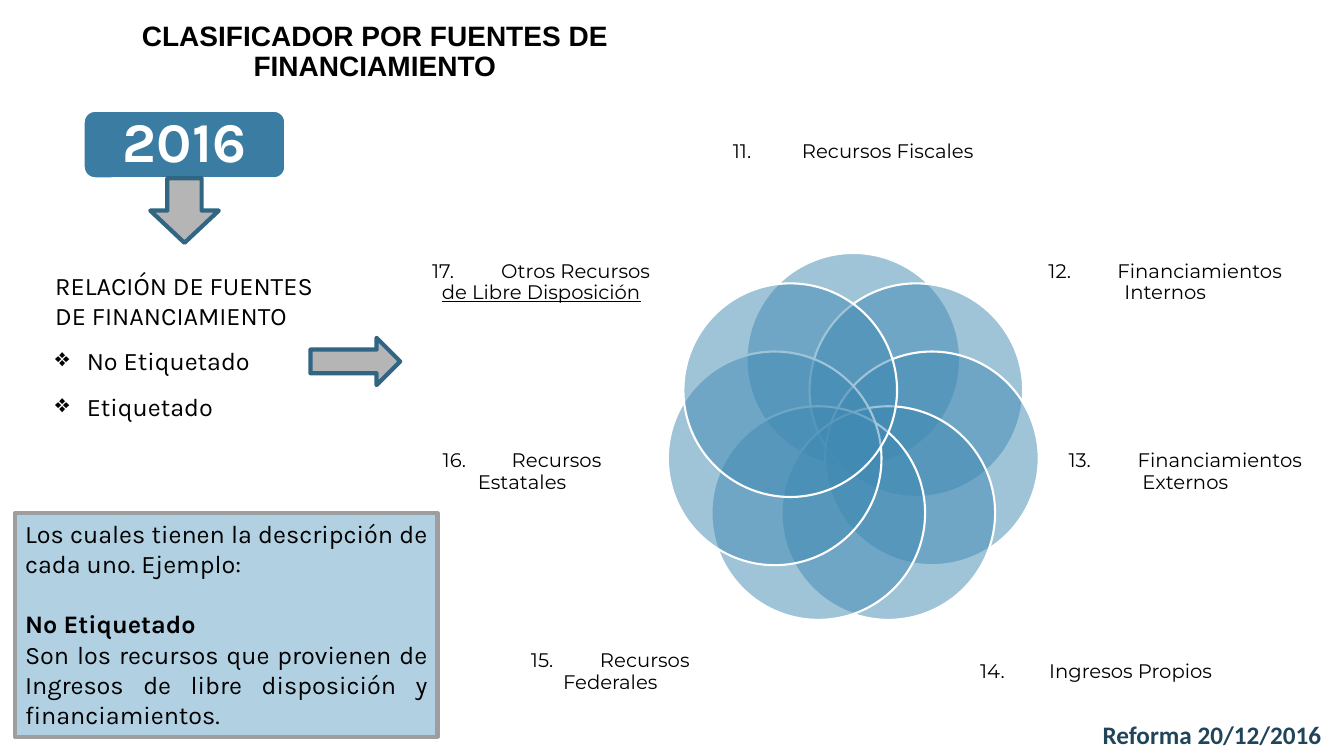
from math import cos, pi, sin

from lxml.etree import SubElement
from pptx import Presentation
from pptx.dml.color import RGBColor
from pptx.enum.shapes import MSO_SHAPE
from pptx.enum.text import MSO_ANCHOR, MSO_AUTO_SIZE, PP_ALIGN
from pptx.oxml.ns import qn
from pptx.util import Pt

BLACK = RGBColor(0x00, 0x00, 0x00)
WHITE = RGBColor(0xFF, 0xFF, 0xFF)
BLUE = RGBColor(0x3B, 0x7D, 0xA2)
PETAL_BLUE = RGBColor(0x41, 0x8A, 0xB3)
DARK_BLUE = RGBColor(0x30, 0x66, 0x84)
PALE_BLUE = RGBColor(0xB1, 0xD1, 0xE3)
NAVY = RGBColor(0x20, 0x45, 0x5A)
ARROW_GRAY = RGBColor(0xB5, 0xB5, 0xB5)
BORDER_GRAY = RGBColor(0x9E, 0x9E, 0x9E)

FUNDING_SOURCES = [
    ("11.\tRecursos Fiscales", "", (522, 61.9, 175, 93.6)),
    ("12.\tFinanciamientos Internos", "", (729.4, 150.5, 205.9, 103)),
    ("13.\tFinanciamientos Externos", "", (740.9, 282.2, 211.7, 110.2)),
    ("14.\tIngresos Propios", "", (695.5, 429.8, 175, 100.8)),
    ("15.\tRecursos Federales", "", (348.5, 429.8, 175, 100.8)),
    ("16.\tRecursos Estatales", "", (291.6, 282.2, 162.7, 110.2)),
    ("17.\tOtros Recursos", " de Libre Disposición", (303.8, 150.5, 165.6, 103)),
]
FLOWER_X, FLOWER_Y = 609.5, 314.6
RING_RADIUS = 57.6
PETAL_DIAMETER = 152.6


def write(paragraph, text, font="Karla", size=18, color=BLACK, bold=False, underline=False,
          align=PP_ALIGN.LEFT, spacing=None, before=None, bullet=None, tab=None):
    paragraph.alignment = align
    if spacing:
        paragraph.line_spacing = spacing
    if before:
        paragraph.space_before = Pt(before)
    properties = paragraph._p.get_or_add_pPr()
    if bullet:
        properties.set("marL", str(Pt(22.5)))
        properties.set("indent", str(Pt(-22.5)))
        SubElement(properties, qn("a:buChar"), char=bullet)
    if tab:
        tabs = SubElement(properties, qn("a:tabLst"))
        SubElement(tabs, qn("a:tab"), pos=str(Pt(tab)), algn="l")
    run = paragraph.add_run()
    run.text = text
    run.font.name = font
    run.font.size = Pt(size)
    run.font.bold = bold
    run.font.underline = underline
    run.font.color.rgb = color


class SlideBuilder:
    line_width = 3

    def __init__(self, slide):
        self.slide = slide

    def frame(self, shape, anchor=MSO_ANCHOR.TOP, wrap=True, margins=(7.2, 3.6)):
        frame = shape.text_frame
        frame.auto_size = MSO_AUTO_SIZE.NONE
        frame.word_wrap = wrap
        frame.vertical_anchor = anchor
        frame.margin_left = frame.margin_right = Pt(margins[0])
        frame.margin_top = frame.margin_bottom = Pt(margins[1])
        return frame

    def title(self, text, box, **style):
        shape = self.slide.shapes.title
        shape.left, shape.top, shape.width, shape.height = map(Pt, box)
        write(self.frame(shape).paragraphs[0], text, **style)

    def text(self, box, **layout):
        return self.frame(self.slide.shapes.add_textbox(*map(Pt, box)), **layout)

    def shape(self, kind, box, fill, line, line_width=line_width, rotation=0, alpha=None):
        shape = self.slide.shapes.add_shape(kind, *map(Pt, box))
        shape.shadow.inherit = False
        shape.rotation = rotation
        shape.fill.solid()
        shape.fill.fore_color.rgb = fill
        shape.line.color.rgb = line
        shape.line.width = Pt(line_width)
        if alpha:
            color = shape._element.spPr.find(qn("a:solidFill")).find(qn("a:srgbClr"))
            SubElement(color, qn("a:alpha"), val=str(alpha * 1000))
        return shape

    def arrow(self, box, rotation=0):
        self.shape(MSO_SHAPE.DOWN_ARROW, box, ARROW_GRAY, DARK_BLUE, rotation=rotation)

    def petal(self, angle):
        left = FLOWER_X + RING_RADIUS * sin(angle) - PETAL_DIAMETER / 2
        top = FLOWER_Y - RING_RADIUS * cos(angle) - PETAL_DIAMETER / 2
        self.shape(MSO_SHAPE.OVAL, (left, top, PETAL_DIAMETER, PETAL_DIAMETER),
                   PETAL_BLUE, WHITE, line_width=1.5, alpha=50)

    def source_label(self, text, underlined, box):
        paragraph = self.text(box, anchor=MSO_ANCHOR.MIDDLE, margins=(0, 0)).paragraphs[0]
        style = dict(font="Montserrat", size=14, align=PP_ALIGN.CENTER, spacing=0.9)
        write(paragraph, text, tab=49.3, **style)
        if underlined:
            write(paragraph, underlined, underline=True, **style)


def main():
    presentation = Presentation()
    presentation.slide_width, presentation.slide_height = Pt(960), Pt(540)
    builder = SlideBuilder(presentation.slides.add_slide(presentation.slide_layouts[5]))

    builder.title("CLASIFICADOR POR FUENTES DE FINANCIAMIENTO", (10.8, 12.2, 514, 51),
                  font="Arial", size=20, bold=True, align=PP_ALIGN.CENTER, spacing=0.9)

    year = builder.shape(MSO_SHAPE.ROUNDED_RECTANGLE, (59.8, 79.2, 144, 48.2),
                         BLUE, WHITE, line_width=1.5)
    year_frame = builder.frame(year, anchor=MSO_ANCHOR.MIDDLE, margins=(12, 0))
    write(year_frame.paragraphs[0], "2016", size=40, color=WHITE, bold=True,
          align=PP_ALIGN.CENTER, spacing=0.9)

    relation = builder.text((32.4, 189.4, 198.7, 138.2))
    write(relation.paragraphs[0], "RELACIÓN DE FUENTES DE FINANCIAMIENTO")
    for category in ("No Etiquetado", "Etiquetado"):
        write(relation.add_paragraph(), category, spacing=1.5, bullet="❖")

    builder.arrow((236.9, 226.1, 33.8, 64.1), rotation=270)
    builder.arrow((107.3, 127.4, 49, 46.1))

    for index, (text, underlined, box) in enumerate(FUNDING_SOURCES):
        builder.petal(2 * pi * index / len(FUNDING_SOURCES))
        builder.source_label(text, underlined, box)

    example = builder.frame(builder.shape(MSO_SHAPE.RECTANGLE, (10.8, 366.5, 301.7, 159.8),
                                          PALE_BLUE, BORDER_GRAY))
    write(example.paragraphs[0], "Los cuales tienen la descripción de cada uno. Ejemplo:",
          align=PP_ALIGN.JUSTIFY)
    write(example.add_paragraph(), "No Etiquetado", bold=True, before=21.5)
    write(example.add_paragraph(), "Son los recursos que provienen de Ingresos de libre "
          "disposición y financiamientos.", align=PP_ALIGN.JUSTIFY)

    reform = builder.text((780.5, 509, 172.1, 29.5), wrap=False)
    write(reform.paragraphs[0], "Reforma 20/12/2016", font="Calibri", color=NAVY,
          bold=True, spacing=1.07)

    presentation.save("out.pptx")


if __name__ == "__main__":
    main()
